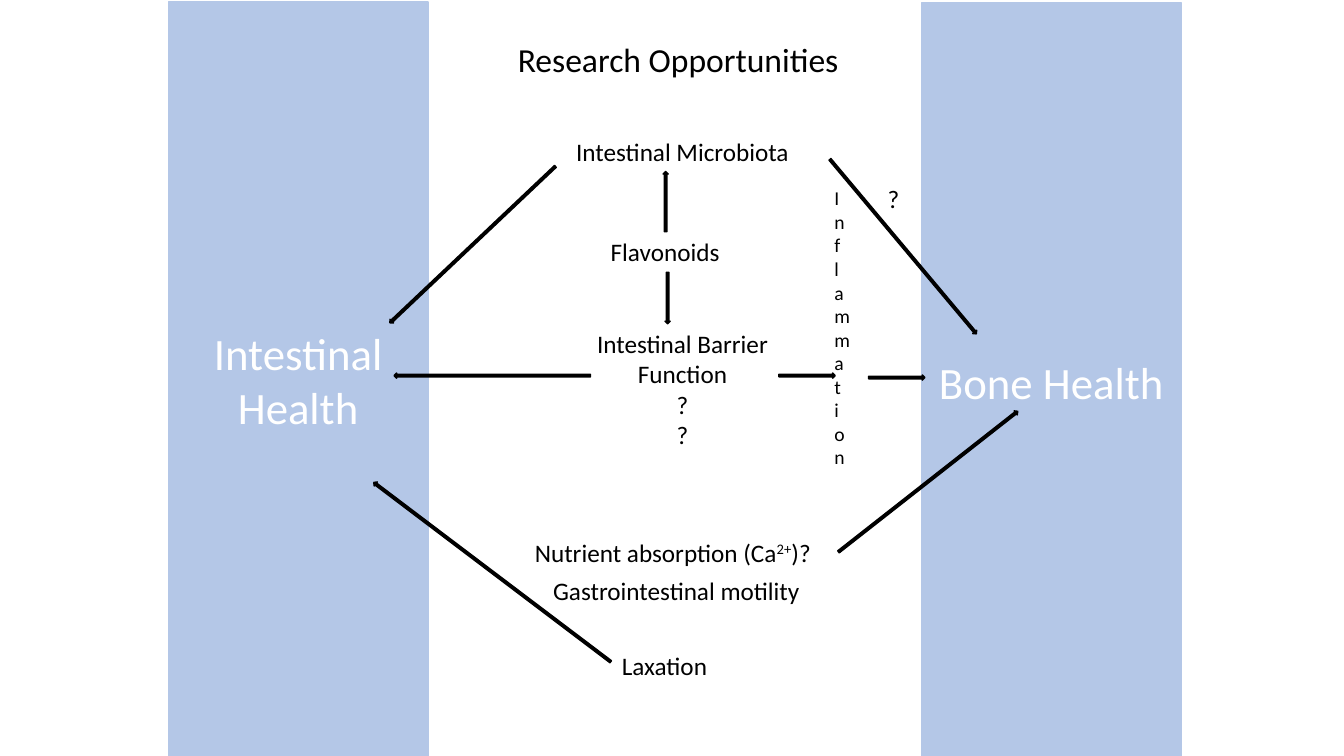
"""Build the research opportunities slide linking intestinal and bone health."""
from pptx import Presentation
from pptx import util as u
from pptx.dml.color import RGBColor
from pptx.enum import shapes, text

COLORS = {"band": "B4C7E7", "ink": "000000", "light": "FFFFFF"}
KINDS = shapes.MSO_SHAPE
ALIGN = text.PP_ALIGN


def add_solid(kind, box, color):
    """Add a shape with the same fill and outline colour."""
    shape = slide.shapes.add_shape(kind, *map(u.Cm, box))
    shape.shadow.inherit = False
    shape.fill.solid()
    shape.fill.fore_color.rgb = RGBColor.from_string(COLORS[color])
    shape.line.color.rgb = RGBColor.from_string(COLORS[color])
    shape.line.width = u.Pt(1)
    return shape


def write(shape, lines, size, color, align):
    """Write one paragraph a line; '^' encloses superscript."""
    frame = shape.text_frame
    font_format = {"name": "Calibri", "size": u.Pt(size)}
    for index, line in enumerate(lines):
        paragraph = frame.add_paragraph() if index else frame.paragraphs[0]
        paragraph.alignment = align
        for position, part in enumerate(line.split("^")):
            run = paragraph.add_run()
            run.text = part
            for name, value in font_format.items():
                setattr(run.font, name, value)
            run.font.color.rgb = RGBColor.from_string(COLORS[color])
            if position % 2:
                run._r.get_or_add_rPr().set("baseline", "30000")


presentation = Presentation()
presentation.slide_width = u.Cm(33.87)
presentation.slide_height = u.Cm(19.05)
slide = presentation.slides.add_slide(presentation.slide_layouts[6])

bands = [
    ("Intestinal Health", 4.24, 0.05),
    ("Bone Health", 23.22, 0.08),
]
for label, left, top in bands:
    band = add_solid(KINDS.RECTANGLE, (left, top, 6.55, 19.05), "band")
    band.text_frame.word_wrap = True
    band.text_frame.vertical_anchor = text.MSO_ANCHOR.MIDDLE
    write(band, [label], 32, "light", ALIGN.CENTER)

labels = [
    (["Research Opportunities"], (12.8, 0.86, 8.86, 1.27), 24, ALIGN.LEFT),
    (["Intestinal Microbiota"], (14.27, 3.3, 5.92, 1.02), 18, ALIGN.LEFT),
    (["Flavonoids"], (15.14, 5.84, 3.28, 1.02), 18, ALIGN.LEFT),
    (["Intestinal Barrier", "Function", "?", "?"], (14.76, 8.15, 4.88, 3.33), 18, ALIGN.CENTER),
    (["Laxation"], (15.42, 16.26, 2.69, 1.02), 18, ALIGN.LEFT),
    (["Gastrointestinal motility"], (13.69, 14.38, 6.78, 1.02), 18, ALIGN.LEFT),
    (["?"], (22.12, 4.5, 0.81, 1.02), 18, ALIGN.LEFT),
    (["Nutrient absorption (Ca^2+^)?"], (13.23, 13.41, 7.82, 1.02), 18, ALIGN.LEFT),
]
for lines, box, size, align in labels:
    label_box = slide.shapes.add_textbox(*map(u.Cm, box))
    label_box.text_frame.word_wrap = False
    label_box.text_frame.auto_size = text.MSO_AUTO_SIZE.SHAPE_TO_FIT_TEXT
    write(label_box, lines, size, "ink", align)

inflammation = slide.shapes.add_textbox(*map(u.Cm, (20.78, 4.57, 1.22, 10.03)))
inflammation.text_frame.word_wrap = True
inflammation.text_frame.auto_size = text.MSO_AUTO_SIZE.SHAPE_TO_FIT_TEXT
inflammation.text_frame._txBody.bodyPr.set("vert", "wordArtVert")
write(inflammation, ["Inflammation"], 14, "ink", ALIGN.LEFT)

thickness = 0.13
vertical_arrows = [(16.76, 6.86, 1.3, 0), (16.71, 4.32, 1.52, 180)]
for left, top, length, angle in vertical_arrows:
    arrow = add_solid(KINDS.DOWN_ARROW, (left, top, thickness, length), "ink")
    arrow.rotation = angle

horizontal_arrows = [
    (9.04, 6.1, 5.74, 136.6),
    (8.66, 14.35, 7.49, 217.1),
    (9.93, 9.4, 4.95, 180),
    (19.89, 6.15, 5.74, 50),
    (19.63, 9.4, 1.42, 0),
    (21.89, 9.45, 1.42, 0),
    (20.52, 12.07, 5.74, 321.9),
]
for left, top, length, angle in horizontal_arrows:
    arrow = add_solid(KINDS.RIGHT_ARROW, (left, top, length, thickness), "ink")
    arrow.rotation = angle

presentation.save("out.pptx")
